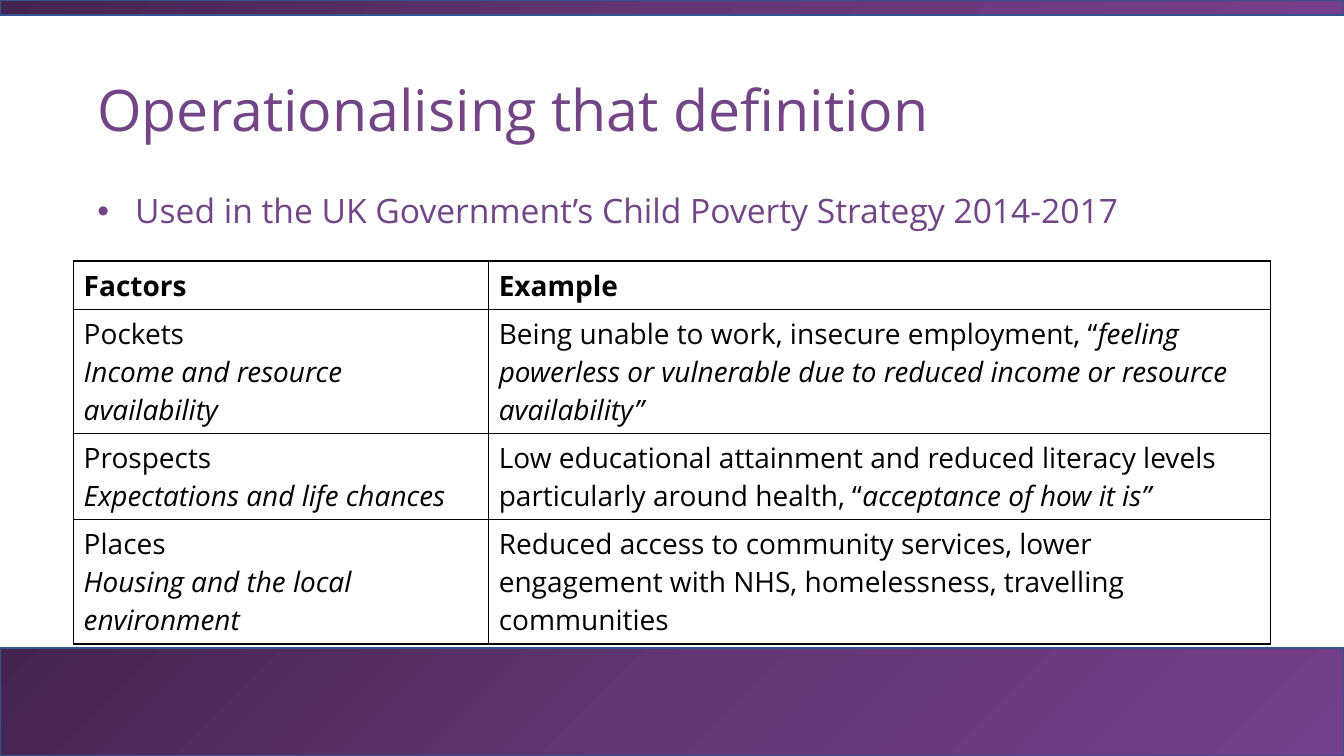
from copy import deepcopy

from lxml.etree import SubElement
from pptx import Presentation
from pptx.dml.color import RGBColor
from pptx.enum.shapes import MSO_SHAPE as Shape
from pptx.enum.text import MSO_ANCHOR as Anchor
from pptx.oxml.ns import qn
from pptx.util import Pt

FONT = "Open Sans"
COLOURS = {
    "purple": "734586",
    "black": "000000",
    "band_line": "32538F",
    "band_dark": "442550",
    "band_mid": "623674",
    "band_light": "75408B",
}
INSET = 3.6
SLIDE_WIDTH, SLIDE_HEIGHT = 960, 540
COLUMN_WIDTHS = [296.5, 558.7]
ROW_HEIGHTS = [34.4, 88.8, 61.6, 88.8]
ROWS = [
    [[[("Factors", "b")]], [[("Example", "b")]]],
    [
        [[("Pockets", "")], [("Income and resource availability", "i")]],
        [[("Being unable to work, insecure employment, “", ""),
          ("feeling powerless or vulnerable due to reduced income or resource availability”", "i")]],
    ],
    [
        [[("Prospects", "")], [("Expectations and life chances", "i")]],
        [[("Low educational attainment and reduced literacy levels particularly around health, “", ""),
          ("acceptance of how it is”", "i")]],
    ],
    [
        [[("Places", "")], [("Housing and the local environment", "i")]],
        [[("Reduced access to community services, lower engagement with NHS, "
           "homelessness, travelling communities", "")]],
    ],
]


def colour(name):
    return RGBColor.from_string(COLOURS[name])


def add_run(paragraph, text, size, colour_name, style=""):
    run = paragraph.add_run()
    run.text = text
    run.font.name = FONT
    run.font.size = Pt(size)
    run.font.color.rgb = colour(colour_name)
    run.font.bold = style == "b"
    run.font.italic = style == "i"


def add_band(slide, left, top, width, height):
    band = slide.shapes.add_shape(Shape.RECTANGLE, Pt(left), Pt(top), Pt(width), Pt(height))
    band.shadow.inherit = False
    band.line.color.rgb = colour("band_line")
    band.line.width = Pt(1)
    band.fill.gradient()
    band.fill.gradient_angle = 315
    first_stop = band.fill._fill._gradFill.find(qn("a:gsLst"))[0]
    first_stop.addnext(deepcopy(first_stop))
    stops = zip(band.fill.gradient_stops, (0, 0.5, 1), ("band_dark", "band_mid", "band_light"))
    for stop, position, name in stops:
        stop.position = position
        stop.color.rgb = colour(name)


def add_text_frame(slide, left, top, width, height, anchor):
    box = slide.shapes.add_textbox(Pt(left), Pt(top), Pt(width), Pt(height))
    frame = box.text_frame
    frame.word_wrap = True
    frame.vertical_anchor = anchor
    frame.margin_left = frame.margin_right = Pt(INSET)
    frame.margin_top = frame.margin_bottom = Pt(INSET)
    return frame


def add_title(slide, left, top, width, height):
    paragraph = add_text_frame(slide, left, top, width, height, Anchor.MIDDLE).paragraphs[0]
    paragraph.line_spacing = 0.9
    add_run(paragraph, "Operationalising that definition", 40.9, "purple")


def add_bullet(slide, left, top, width, height):
    paragraph = add_text_frame(slide, left, top, width, height, Anchor.TOP).paragraphs[0]
    paragraph.line_spacing = 1.1
    properties = paragraph._p.get_or_add_pPr()
    properties.set("marL", str(Pt(27)))
    properties.set("indent", str(-Pt(27)))
    SubElement(properties, qn("a:buFont"), typeface="Arial")
    SubElement(properties, qn("a:buChar"), char="•")
    add_run(paragraph, "Used in the UK Government’s Child Poverty Strategy 2014-2017", 24, "purple")


def add_borders(cell):
    properties = cell._tc.get_or_add_tcPr()
    for side in ("lnL", "lnR", "lnT", "lnB"):
        line = SubElement(properties, qn(f"a:{side}"), w=str(Pt(1)))
        fill = SubElement(line, qn("a:solidFill"))
        SubElement(fill, qn("a:srgbClr"), val=COLOURS["black"])


def fill_cell(cell, paragraphs):
    add_borders(cell)
    cell.fill.background()
    frame = cell.text_frame
    for index, runs in enumerate(paragraphs):
        paragraph = frame.add_paragraph() if index else frame.paragraphs[0]
        for text, style in runs:
            add_run(paragraph, text, 20, "black", style)


def add_factor_table(slide, left, top):
    table = slide.shapes.add_table(
        len(ROWS), len(COLUMN_WIDTHS), Pt(left), Pt(top),
        Pt(sum(COLUMN_WIDTHS)), Pt(sum(ROW_HEIGHTS))).table
    table.first_row = table.horz_banding = False
    for column, width in zip(table.columns, COLUMN_WIDTHS):
        column.width = Pt(width)
    for row, height, contents in zip(table.rows, ROW_HEIGHTS, ROWS):
        row.height = Pt(height)
        for cell, paragraphs in zip(row.cells, contents):
            fill_cell(cell, paragraphs)


def main():
    presentation = Presentation()
    presentation.slide_width = Pt(SLIDE_WIDTH)
    presentation.slide_height = Pt(SLIDE_HEIGHT)
    slide = presentation.slides.add_slide(presentation.slide_layouts[6])
    add_band(slide, 0, 463, SLIDE_WIDTH, SLIDE_HEIGHT - 463)
    add_band(slide, 0, 0, SLIDE_WIDTH, 10.8)
    add_title(slide, 66, 28.8, 828, 104.4)
    add_bullet(slide, 66, 129.6, 828, 329)
    add_factor_table(slide, 52.6, 186.5)
    presentation.save("out.pptx")


if __name__ == "__main__":
    main()
